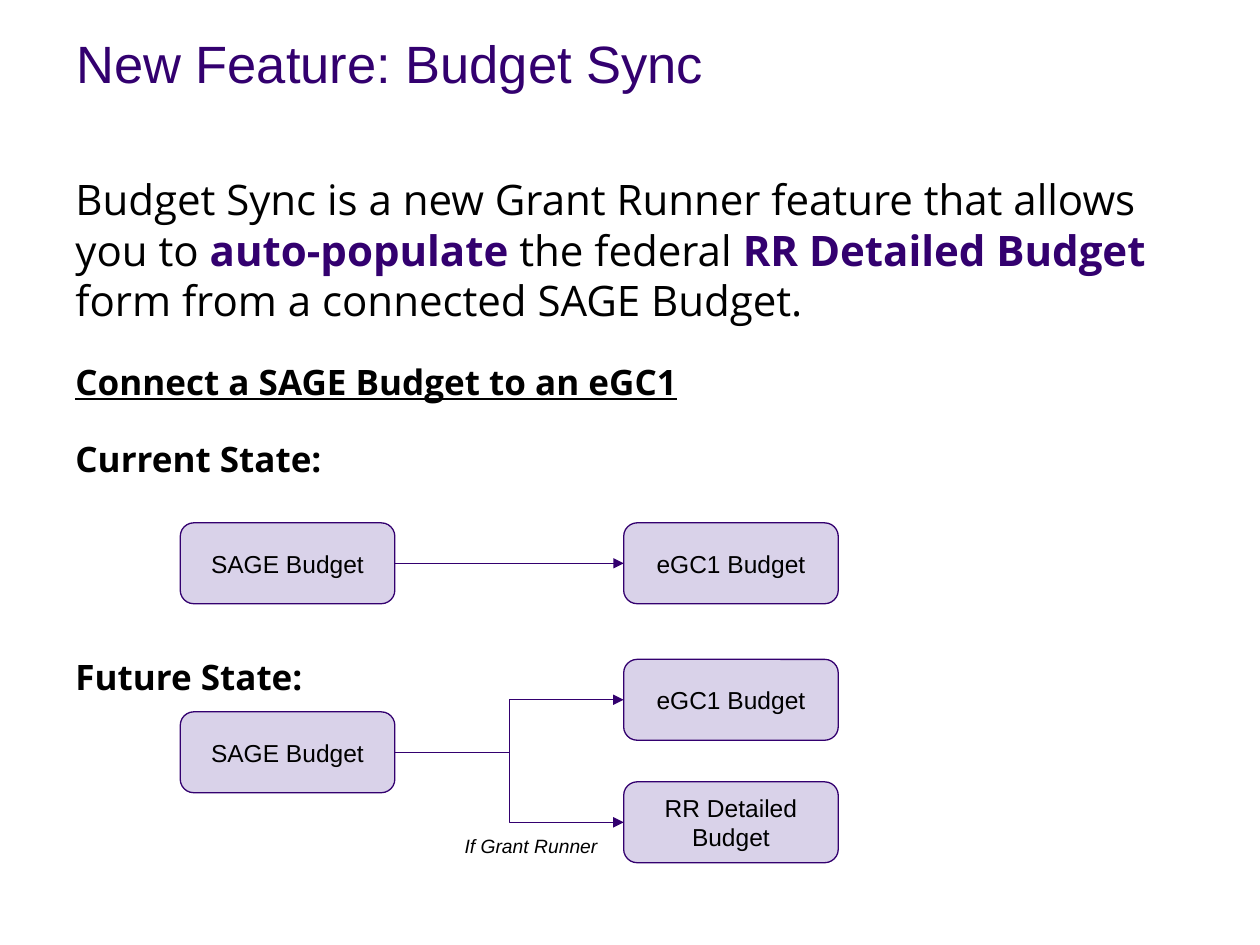
from lxml import etree
from pptx import Presentation
from pptx.dml.color import RGBColor
from pptx.enum.shapes import MSO_CONNECTOR, MSO_SHAPE
from pptx.enum.text import MSO_ANCHOR, PP_ALIGN
from pptx.oxml.ns import qn
from pptx.util import Pt

ROUNDED = MSO_SHAPE.ROUNDED_RECTANGLE
STRAIGHT = MSO_CONNECTOR.STRAIGHT
ELBOW = MSO_CONNECTOR.ELBOW
MIDDLE = MSO_ANCHOR.MIDDLE
CENTER = PP_ALIGN.CENTER

PURPLE = "33006F"
LILAC = "D9D2E9"
BLACK = "000000"
INSET = 7.2


def color(value):
    return RGBColor.from_string(value)


def prepare_frame(shape):
    frame = shape.text_frame
    frame.word_wrap = True
    frame.margin_left = frame.margin_right = Pt(INSET)
    frame.margin_top = frame.margin_bottom = Pt(INSET)
    return frame


presentation = Presentation()
presentation.slide_width = Pt(720)
presentation.slide_height = Pt(540)
slide = presentation.slides.add_slide(presentation.slide_layouts[6])
shapes = slide.shapes

texts = [
    ("New Feature: Budget Sync", 36.5, 14.4, 660, 77.8, 30, PURPLE, False, None),
    ("If Grant Runner", 254.9, 470.2, 97.2, 23, 11, BLACK, True, CENTER),
]
for text, left, top, width, height, size, text_color, italic, alignment in texts:
    text_box = shapes.add_textbox(Pt(left), Pt(top), Pt(width), Pt(height))
    frame = prepare_frame(text_box)
    frame.text = text
    paragraph = frame.paragraphs[0]
    paragraph.alignment = alignment
    if size == 30:
        paragraph.line_spacing = 0.9
    font = paragraph.runs[0].font
    font.name = "Arial"
    font.size = Pt(size)
    font.italic = italic
    font.color.rgb = color(text_color)

body = shapes.add_textbox(Pt(36), Pt(92.2), Pt(661), Pt(451.4))
frame = prepare_frame(body)
intro = frame.paragraphs[0]
intro_runs = [
    ("Budget Sync is a new Grant Runner feature that allows you to ", False),
    ("auto-populate", True),
    (" the federal ", False),
    ("RR Detailed Budget ", True),
    ("form from a connected SAGE Budget.", False),
]
for text, highlighted in intro_runs:
    run = intro.add_run()
    run.text = text
    run.font.name = "Open Sans"
    run.font.size = Pt(24)
    run.font.bold = highlighted
    run.font.color.rgb = color(PURPLE if highlighted else BLACK)

headings = [
    ("Connect a SAGE Budget to an eGC1", 20, True),
    ("Current State:", 20, False),
    ("Future State:", 100.8, False),
]
for text, space_before, underlined in headings:
    paragraph = frame.add_paragraph()
    paragraph.text = text
    paragraph.space_before = Pt(space_before)
    font = paragraph.runs[0].font
    font.name = "Open Sans"
    font.size = Pt(20)
    font.bold = True
    font.underline = underlined
    font.color.rgb = color(BLACK)

source_left, target_left = 103, 356.4
boxes = [
    ("SAGE Budget", source_left, 298.8),
    ("eGC1 Budget", target_left, 298.8),
    ("SAGE Budget", source_left, 406.8),
    ("eGC1 Budget", target_left, 376.8),
    ("RR Detailed Budget", target_left, 446.8),
]
budgets = []
for text, left, top in boxes:
    box = shapes.add_shape(ROUNDED, Pt(left), Pt(top), Pt(122.6), Pt(46.2))
    box.shadow.inherit = False
    box.fill.solid()
    box.fill.fore_color.rgb = color(LILAC)
    box.line.color.rgb = color(PURPLE)
    box.line.width = Pt(0.75)
    frame = prepare_frame(box)
    frame.vertical_anchor = MIDDLE
    frame.text = text
    paragraph = frame.paragraphs[0]
    paragraph.alignment = CENTER
    font = paragraph.runs[0].font
    font.name = "Arial"
    font.size = Pt(14)
    font.color.rgb = color(BLACK)
    budgets.append(box)

current_sage, current_egc1, future_sage, future_egc1, detailed = budgets
links = [
    (STRAIGHT, current_sage, current_egc1),
    (ELBOW, future_sage, detailed),
    (ELBOW, future_sage, future_egc1),
]
for kind, source, target in links:
    connector = shapes.add_connector(kind, 0, 0, 0, 0)
    connector.begin_connect(source, 3)
    connector.end_connect(target, 1)
    connector.line.color.rgb = color(PURPLE)
    connector.line.width = Pt(0.75)
    line = connector.line._get_or_add_ln()
    etree.SubElement(line, qn("a:tailEnd"), type="triangle")
    etree.SubElement(connector._element.spPr, qn("a:effectLst"))

presentation.save("out.pptx")
